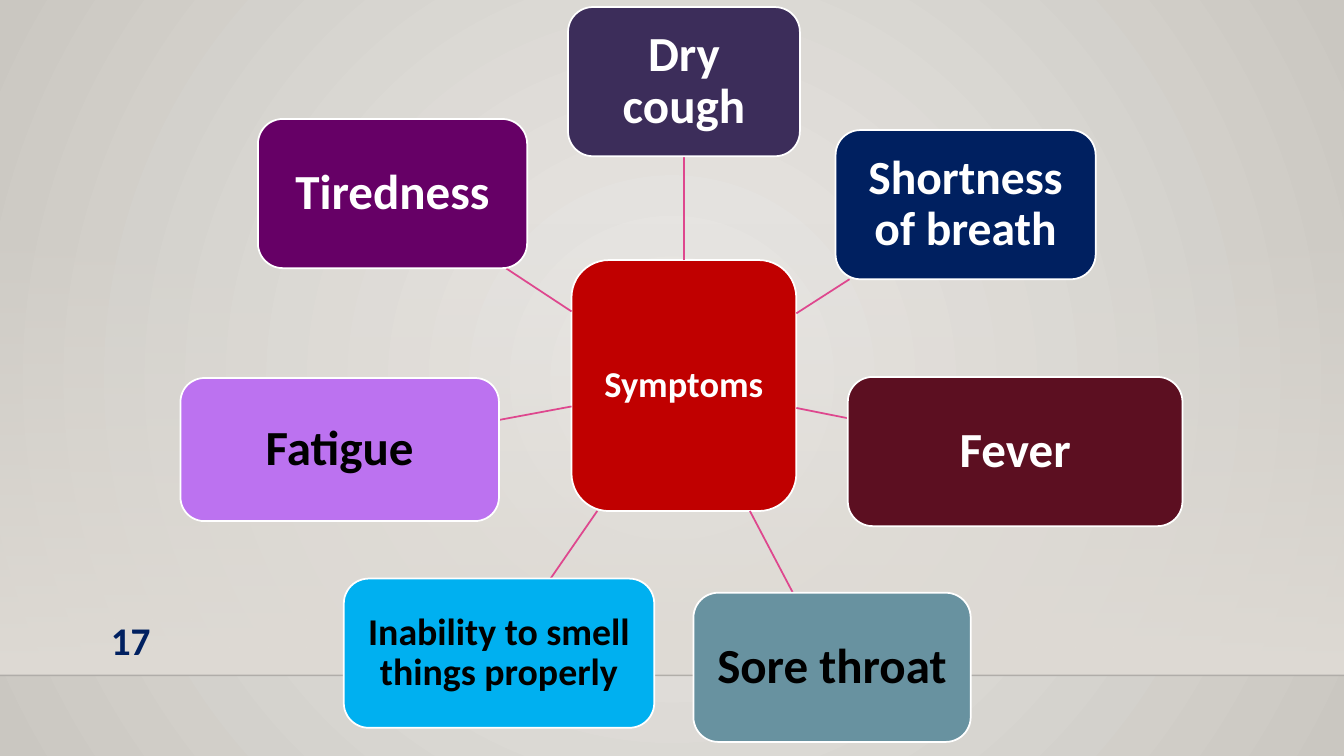
from lxml import etree
from pptx import Presentation
from pptx.dml.color import RGBColor
from pptx.enum.shapes import MSO_CONNECTOR, MSO_SHAPE
from pptx.enum.text import MSO_ANCHOR, PP_ALIGN
from pptx.oxml import parse_xml
from pptx.oxml.ns import nsdecls, qn
from pptx.util import Inches, Pt

STRAIGHT = MSO_CONNECTOR.STRAIGHT
RECTANGLE, ROUNDED = MSO_SHAPE.RECTANGLE, MSO_SHAPE.ROUNDED_RECTANGLE
MIDDLE, TOP = MSO_ANCHOR.MIDDLE, MSO_ANCHOR.TOP
CENTER, RIGHT = PP_ALIGN.CENTER, PP_ALIGN.RIGHT

THEME = {
    "font": "Calibri", "white": "FFFFFF", "black": "000000", "navy": "002060",
    "red": "C00000", "indigo": "3C2D5A", "wine": "5C0F21", "teal": "6892A0",
    "sky": "00B0F0", "lilac": "BC72F0", "purple": "660066", "spoke": "DE478E",
    "floor": "000001", "band": "DFDBD5", "glow": "ECEAE7", "rim": "CAC7C1",
    "large": 35, "medium": 34, "small": 27, "hub": 26, "number": 28,
    "outline": 1.25, "hairline": 1,
}

# Shares of the slide in percent: centre x, centre y, width, height
HUB = ("Symptoms", (50.89, 51, 16.73, 33.2), "red", "white", "hub", 0.07)
SYMPTOMS = [
    ("Dry cough", (50.89, 10.8, 17.25, 19.73), "indigo", "white", "large", 0.1),
    ("Shortness of breath", (71.85, 27.07, 19.35, 19.73), "navy", "white", "medium", 0.09),
    ("Fever", (75.53, 59.73, 24.9, 19.73), "wine", "white", "large", 0.1),
    ("Sore throat", (61.91, 88.27, 20.63, 19.73), "teal", "black", "large", 0.1),
    ("Inability to smell things properly", (37.13, 86.4, 23.1, 19.73), "sky", "black", "small", 0.07),
    ("Fatigue", (25.28, 59.47, 23.7, 18.93), "lilac", "black", "large", 0.1),
    ("Tiredness", (29.21, 25.6, 20.03, 19.73), "purple", "white", "large", 0.1),
]
PAGE_NUMBER = ("17", (8.59, 84.6, 6.68, 7.33))
BAND = (50, 59.4, 100, 59.87)
FLOOR = 89.33

deck = Presentation()
deck.slide_width, deck.slide_height = Inches(13.33), Inches(7.5)
page = deck.slides.add_slide(deck.slide_layouts[6])


def color(name):
    return RGBColor.from_string(THEME[name])


def across(share):
    return round(deck.slide_width * share / 100)


def down(share):
    return round(deck.slide_height * share / 100)


def frame(area):
    x, y, width, height = area
    return across(x - width / 2), down(y - height / 2), across(width), down(height)


def set_gradient(owner, start, end, direction, start_alpha=100):
    old = owner.find(".//" + qn("a:gradFill"))
    new = parse_xml(
        f'<a:gradFill {nsdecls("a")} rotWithShape="1"><a:gsLst>'
        f'<a:gs pos="0"><a:srgbClr val="{THEME[start]}">'
        f'<a:alpha val="{start_alpha * 1000}"/></a:srgbClr></a:gs>'
        f'<a:gs pos="100000"><a:srgbClr val="{THEME[end]}"/></a:gs>'
        f'</a:gsLst>{direction}</a:gradFill>')
    old.getparent().replace(old, new)


def add_line(start, end, color_name, width):
    line = page.shapes.add_connector(STRAIGHT, *start, *end)
    line.line.color.rgb = color(color_name)
    line.line.width = Pt(width)
    etree.SubElement(line.element.spPr, qn("a:effectLst"))
    return line


def write(box, text, color_name, size, align, anchor):
    box.text_frame.word_wrap = True
    box.text_frame.vertical_anchor = anchor
    para = box.text_frame.paragraphs[0]
    para.alignment = align
    span = para.add_run()
    span.text = text
    span.font.name = THEME["font"]
    span.font.size = Pt(THEME[size])
    span.font.bold = True
    span.font.color.rgb = color(color_name)
    return para


def add_node(text, area, fill, ink, size, inset):
    box = page.shapes.add_shape(ROUNDED, *frame(area))
    box.shadow.inherit = False
    box.fill.solid()
    box.fill.fore_color.rgb = color(fill)
    box.line.color.rgb = color("white")
    box.line.width = Pt(THEME["outline"])
    words = box.text_frame
    words.margin_left = words.margin_right = Inches(inset)
    words.margin_top = words.margin_bottom = Inches(inset)
    write(box, text, ink, size, CENTER, MIDDLE).line_spacing = 0.9


def edge_point(area, target):
    left, top, width, height = frame(area)
    x, y = left + width / 2, top + height / 2
    other_left, other_top, other_width, other_height = frame(target)
    step_x = other_left + other_width / 2 - x
    step_y = other_top + other_height / 2 - y
    reach = 1 / max(abs(step_x) * 2 / width, abs(step_y) * 2 / height)
    return round(x + step_x * reach), round(y + step_y * reach)


page.background.fill.gradient()
set_gradient(page.element, "glow", "rim",
             '<a:path path="circle"><a:fillToRect l="50000" t="50000" r="50000" b="50000"/></a:path>')

band = page.shapes.add_shape(RECTANGLE, *frame(BAND))
band.shadow.inherit = False
band.line.fill.background()
band.fill.gradient()
set_gradient(band.element, "band", "band", '<a:lin ang="5400000" scaled="0"/>', 0)

floor = add_line((0, down(FLOOR)), (across(100), down(FLOOR)), "floor", THEME["hairline"])
floor_color = floor.element.find(".//" + qn("a:srgbClr"))
etree.SubElement(floor_color, qn("a:alpha")).set("val", "20000")

number, number_area = PAGE_NUMBER
write(page.shapes.add_textbox(*frame(number_area)), number, "navy", "number", RIGHT, TOP)

add_node(*HUB)
for symptom in SYMPTOMS:
    add_line(edge_point(HUB[1], symptom[1]), edge_point(symptom[1], HUB[1]),
             "spoke", THEME["outline"])
    add_node(*symptom)

deck.save("out.pptx")
